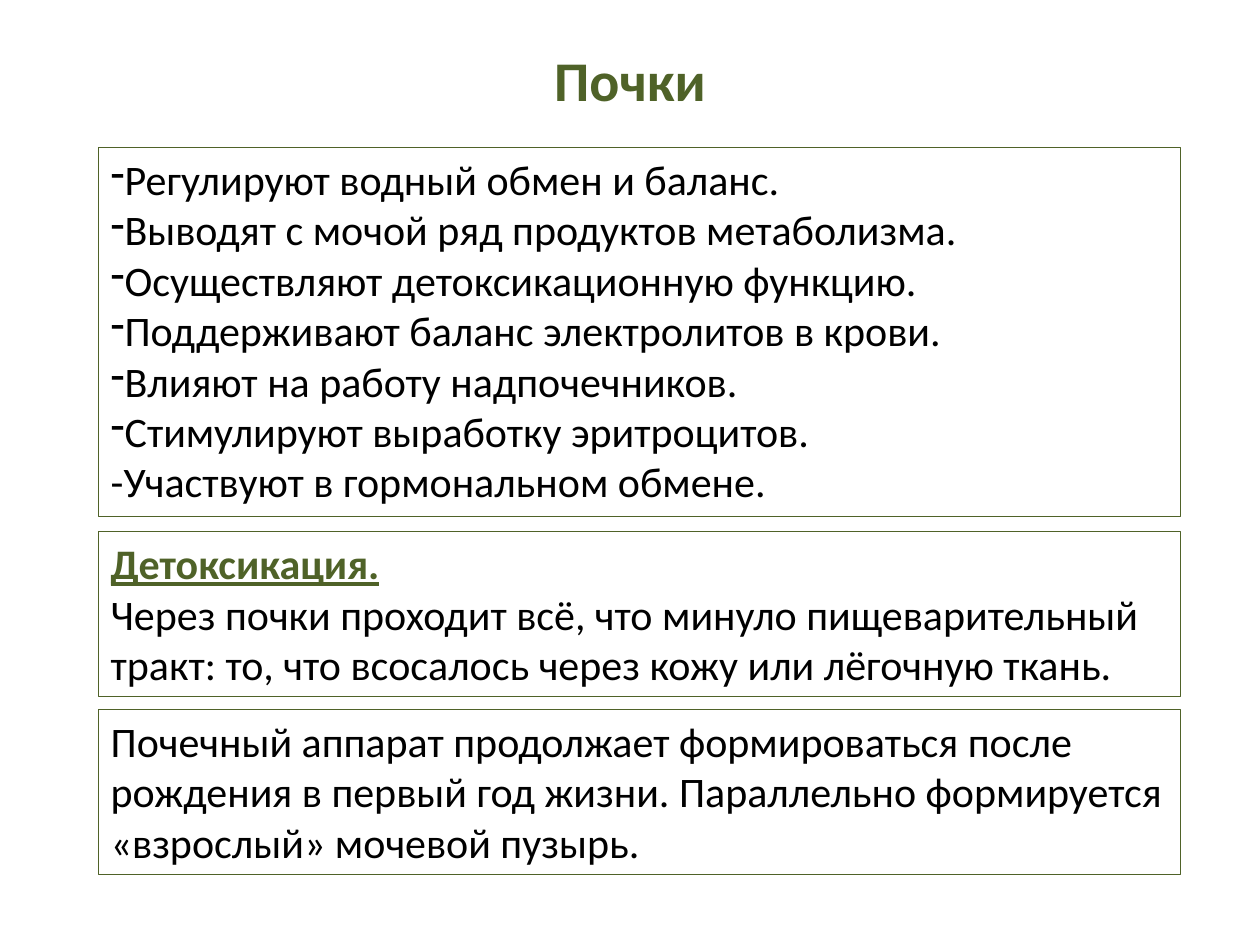
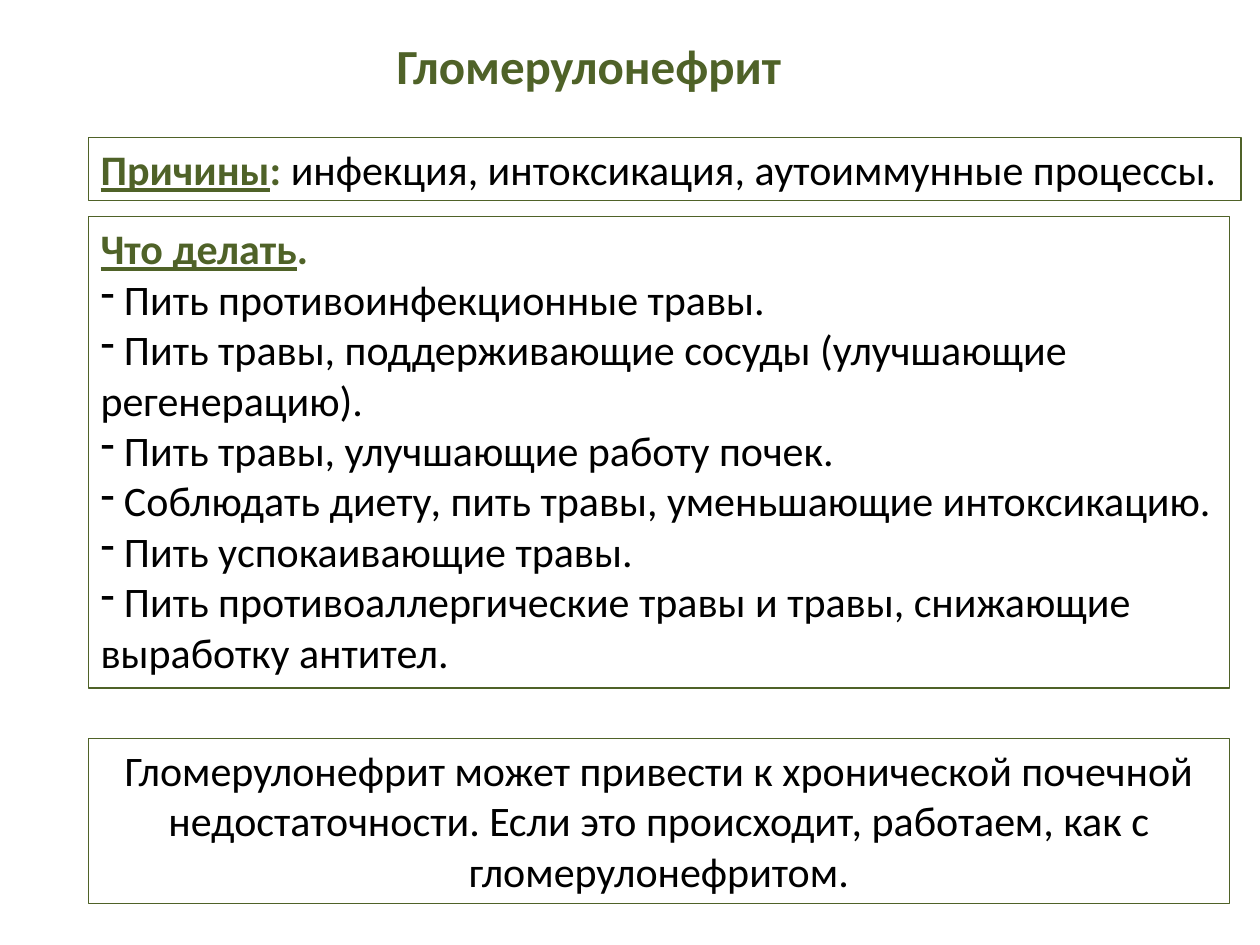
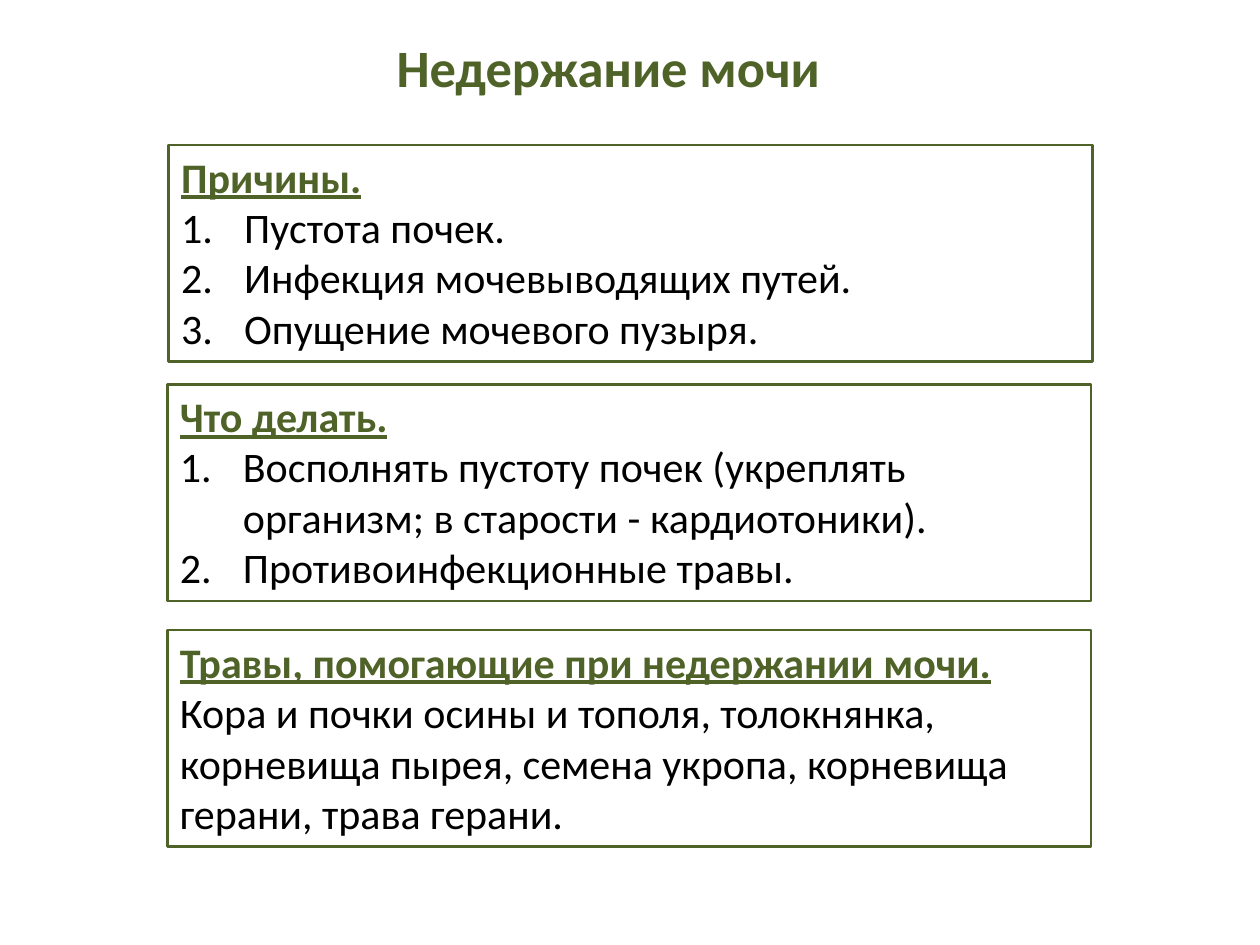
from lxml.etree import SubElement
from pptx import Presentation
from pptx.dml.color import RGBColor
from pptx.enum.text import MSO_AUTO_SIZE as Auto, PP_ALIGN as Align
from pptx.oxml.ns import qn
from pptx.util import Inches, Pt

GREEN, BLACK = "4F6228", "000000"
FONT, SIZE = "Calibri", 24

# Run styles as (colour, bold, underline); a head uses them in order
PLAIN = (BLACK, False, False)
HEAD = [(GREEN, True, True), (GREEN, True, False), PLAIN]

# Each box: (left, top, width, height, wrap), then its paragraphs (kind, parts)
SLIDES = [
    {"title": ("Почки", 32, (4.3, 0.31, 1.42, 0.64)), "line": 0.75, "boxes": [
        ((0.78, 1.17, 8.59, 2.93, True), [
            ("dash", "Регулируют водный обмен и баланс."),
            ("dash", "Выводят с мочой ряд продуктов метаболизма."),
            ("dash", "Осуществляют детоксикационную функцию."),
            ("dash", "Поддерживают баланс электролитов в крови."),
            ("dash", "Влияют на работу надпочечников."),
            ("dash", "Стимулируют выработку эритроцитов."),
            ("text", "-Участвуют в гормональном обмене."),
        ]),
        ((0.78, 4.22, 8.59, 1.31, True), [
            ("head", "Детоксикация."),
            ("text", "Через почки проходит всё, что минуло пищеварительный "
                     "тракт: то, что всосалось через кожу или лёгочную ткань."),
        ]),
        ((0.78, 5.63, 8.59, 1.31, True), [
            ("text", "Почечный аппарат продолжает формироваться после "
                     "рождения в первый год жизни. Параллельно формируется "
                     "«взрослый» мочевой пузырь."),
        ]),
    ]},
    {"title": ("Гломерулонефрит", 28, (3.05, 0.23, 3.28, 0.57)), "line": 0.75, "boxes": [
        ((0.7, 1.09, 9.15, 0.5, False), [
            ("head", "Причины", ":", " инфекция, интоксикация, аутоиммунные процессы."),
        ]),
        ((0.7, 1.72, 9.06, 3.74, True), [
            ("head", "Что делать", "."),
            ("dash", " Пить противоинфекционные травы."),
            ("dash", " Пить травы, поддерживающие сосуды (улучшающие регенерацию)."),
            ("dash", " Пить травы, улучшающие работу почек."),
            ("dash", " Соблюдать диету, пить травы, уменьшающие интоксикацию."),
            ("dash", " Пить успокаивающие травы."),
            ("dash", " Пить противоаллергические травы и травы, снижающие "
                     "выработку антител."),
        ]),
        ((0.7, 5.86, 9.06, 1.31, True), [
            ("center", "Гломерулонефрит может привести к хронической почечной "
                       "недостаточности. Если это происходит, работаем, как с "
                       "гломерулонефритом."),
        ]),
    ]},
    {"title": ("Недержание мочи", 30, (3.05, 0.23, 3.6, 0.61)), "line": 1.5, "boxes": [
        ((1.34, 1.15, 7.33, 1.72, True), [
            ("head", "Причины."),
            ("num", "Пустота почек."),
            ("num", "Инфекция мочевыводящих путей."),
            ("num", "Опущение мочевого пузыря."),
        ]),
        ((1.33, 3.05, 7.33, 1.72, True), [
            ("head", "Что делать."),
            ("num", "Восполнять пустоту почек (укреплять организм; "
                    "в старости - кардиотоники)."),
            ("num", "Противоинфекционные травы."),
        ]),
        ((1.33, 5, 7.33, 1.72, True), [
            ("head", "Травы, помогающие при недержании мочи."),
            ("text", "Кора и почки осины и тополя, толокнянка, корневища пырея, "
                     "семена укропа, корневища герани, трава герани."),
        ]),
    ]},
]


def color(code):
    return RGBColor.from_string(code)


def add_run(para, text, size, style):
    run = para.add_run()
    run.text = text
    font = run.font
    font.name, font.size = FONT, Pt(size)
    tone, font.bold, font.underline = style
    font.color.rgb = color(tone)


def add_box(slide, place, wrap):
    box = slide.shapes.add_textbox(*[Inches(v) for v in place])
    box.text_frame.word_wrap = wrap
    box.text_frame.auto_size = Auto.SHAPE_TO_FIT_TEXT
    return box


def set_mark(para, kind):
    """Give a list paragraph its dash or number."""
    props = para._p.get_or_add_pPr()
    SubElement(props, qn("a:buFontTx"))
    if kind == "dash":
        SubElement(props, qn("a:buChar"), char="-")
    else:
        props.set("marL", str(Inches(0.5)))
        props.set("indent", str(-Inches(0.5)))
        SubElement(props, qn("a:buAutoNum"), type="arabicPeriod")


def fill_box(frame, paras):
    for i, (kind, *parts) in enumerate(paras):
        para = frame.add_paragraph() if i else frame.paragraphs[0]
        if kind in ("dash", "num"):
            set_mark(para, kind)
        elif kind == "center":
            para.alignment = Align.CENTER
        styles = HEAD if kind == "head" else [PLAIN]
        for text, style in zip(parts, styles):
            add_run(para, text, SIZE, style)


def main():
    deck = Presentation()
    deck.slide_width, deck.slide_height = Inches(10), Inches(7.5)
    for page in SLIDES:
        slide = deck.slides.add_slide(deck.slide_layouts[6])
        # Title
        text, size, place = page["title"]
        title = add_box(slide, place, False)
        add_run(title.text_frame.paragraphs[0], text, size, (GREEN, True, False))
        # Framed text
        for (*place, wrap), paras in page["boxes"]:
            box = add_box(slide, place, wrap)
            box.line.color.rgb = color(GREEN)
            box.line.width = Pt(page["line"])
            fill_box(box.text_frame, paras)
    deck.save("out.pptx")


if __name__ == "__main__":
    main()
